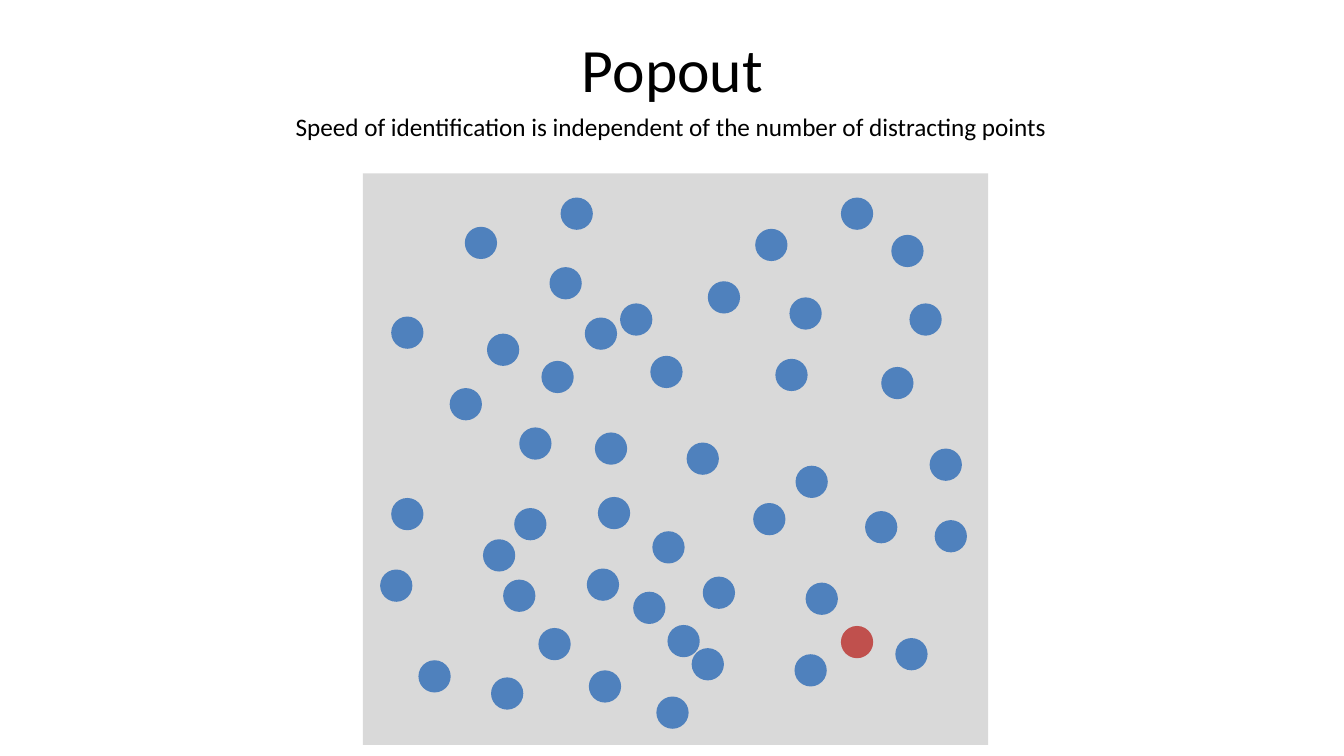
from pptx import Presentation
from pptx import util as u
from pptx.dml.color import RGBColor
from pptx.enum import shapes, text

COLORS = {"text": "000000", "field": "D9D9D9", "distractor": "4F81BD", "target": "C0504D"}
FONT = "Calibri"
CELL = u.Inches(0.1)  # the slide is a grid of 133.3 columns by 75 rows
DOT = 3.2

# Left column and top row of each dot
TARGET = (83.4, 62.1)
DISTRACTORS = [
    (46.1, 22.5), (64.5, 35.3), (47.9, 53.5), (51.5, 42.4), (70.2, 27.9),
    (68.1, 43.9), (44.6, 38.5), (79.9, 57.8), (87.4, 36.4), (64.7, 52.7),
    (88.4, 23.3), (90.2, 30.1), (61.5, 30.1), (78.3, 29.5), (92.2, 44.5),
    (74.7, 49.9), (74.9, 22.7), (66.2, 62.0), (88.8, 63.3), (59.0, 42.9),
    (38.8, 31.4), (53.7, 35.8), (53.4, 62.3), (51.0, 50.4), (54.5, 26.5),
    (83.4, 19.6), (38.8, 49.4), (78.9, 46.2), (62.8, 58.7), (48.3, 33.1),
    (58.0, 31.5), (76.9, 35.6), (55.6, 19.6), (69.7, 57.2), (59.3, 49.3),
    (41.5, 65.5), (78.8, 64.9), (58.4, 66.5), (85.8, 50.7), (65.1, 69.1),
    (48.7, 67.2), (49.9, 57.5), (37.7, 56.5), (92.7, 51.6), (68.6, 64.3),
    (58.2, 56.4),
]


def cells(*counts):
    return [round(n * CELL) for n in counts]


def rgb(name):
    return RGBColor.from_string(COLORS[name])


def add_filled(parent, kind, box, color):
    sp = parent.add_shape(kind, *cells(*box))
    sp.shadow.inherit = False
    sp.fill.solid()
    sp.fill.fore_color.rgb = rgb(color)
    sp.line.fill.background()


def add_dot(group, spot, color):
    add_filled(group.shapes, shapes.MSO_SHAPE.OVAL, (*spot, DOT, DOT), color)


def write(tf, words, size):
    tf.text = words
    p = tf.paragraphs[0]
    p.alignment = text.PP_ALIGN.CENTER
    p.font.name = FONT
    p.font.size = u.Pt(size)
    p.font.color.rgb = rgb("text")


def set_title(s, words, box):
    title = s.shapes.title
    title.left, title.top, title.width, title.height = cells(*box)
    title.text_frame.vertical_anchor = text.MSO_ANCHOR.MIDDLE
    write(title.text_frame, words, 44)


def add_caption(s, words, box):
    tf = s.shapes.add_textbox(*cells(*box)).text_frame
    tf.word_wrap = False
    tf.auto_size = text.MSO_AUTO_SIZE.SHAPE_TO_FIT_TEXT
    write(tf, words, 18)


def main():
    prs = Presentation()
    prs.slide_width, prs.slide_height = u.Inches(13.33), u.Inches(7.5)
    s = prs.slides.add_slide(prs.slide_layouts.get_by_name("Title Only"))

    add_filled(s.shapes, shapes.MSO_SHAPE.RECTANGLE, (36, 17.2, 62, 56.7), "field")
    set_title(s, "Popout", (6.7, 0.5, 120, 12.5))
    dots = s.shapes.add_group_shape()
    for spot in DISTRACTORS:
        add_dot(dots, spot, "distractor")
    add_dot(dots, TARGET, "target")
    add_caption(s, "Speed of identification is independent of the number of distracting points",
                (27.8, 10.6, 77.5, 4))
    prs.save("out.pptx")


if __name__ == "__main__":
    main()
